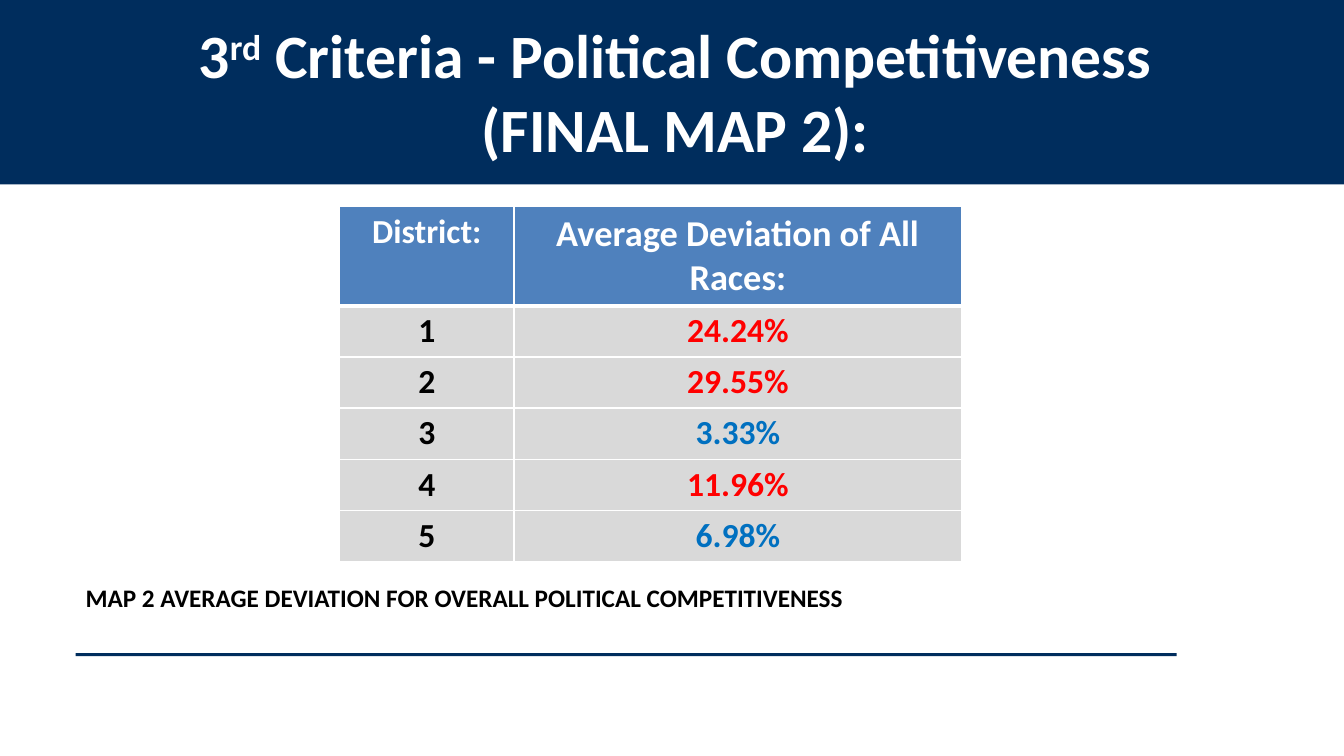
from lxml.etree import SubElement
from pptx import Presentation
from pptx.dml.color import RGBColor
from pptx.enum.shapes import MSO_SHAPE as Shape
from pptx.enum.text import MSO_ANCHOR as Anchor, MSO_AUTO_SIZE as AutoSize, PP_ALIGN as Align
from pptx.oxml.ns import qn
from pptx.util import Inches, Pt

NAVY = RGBColor(0x00, 0x2D, 0x5D)
HEADER_BLUE = RGBColor(0x4F, 0x81, 0xBD)
GREY = RGBColor(0xD9, 0xD9, 0xD9)
WHITE = RGBColor(0xFF, 0xFF, 0xFF)
BLACK = RGBColor(0x00, 0x00, 0x00)
RED = RGBColor(0xFF, 0x00, 0x00)
BLUE = RGBColor(0x00, 0x70, 0xC0)

WIDTH, HEIGHT = 13.33, 7.5
COMPETITIVE_LIMIT = 10
HEADINGS = [("District:", 24), ("Average Deviation of All Races:", 26)]
DEVIATIONS = [24.24, 29.55, 3.33, 11.96, 6.98]


def add_span(para, text, size, color):
    """Add one bold Calibri run and return it."""
    span = para.add_run()
    span.text = text
    span.font.name = "Calibri"
    span.font.size = Pt(size)
    span.font.bold = True
    span.font.color.rgb = color
    return span


def add_bar(page, left, top, width, height):
    """Add a plain navy rectangle."""
    bar = page.shapes.add_shape(Shape.RECTANGLE, *map(Inches, (left, top, width, height)))
    bar.shadow.inherit = False
    bar.fill.solid()
    bar.fill.fore_color.rgb = NAVY
    bar.line.fill.background()
    return bar


def add_title_band(page, left, top, width, height):
    """Fill the band and centre the two-line title over it."""
    title = page.shapes.title
    band = add_bar(page, left, top, width, height)
    title._element.addprevious(band._element)
    title.left, title.top = Inches(left + 1.06), Inches(top + 0.12)
    title.width, title.height = Inches(width - 2.05), Inches(height - 0.13)
    frame = title.text_frame
    frame.word_wrap = True
    frame.auto_size = AutoSize.NONE
    frame.vertical_anchor = Anchor.TOP
    first, second = frame.paragraphs[0], frame.add_paragraph()
    first.alignment = second.alignment = Align.CENTER
    add_span(first, "3", 44, WHITE)
    ordinal = add_span(first, "rd", 44, WHITE)
    ordinal.font._element.set("baseline", "30000")
    add_span(first, " Criteria - Political Competitiveness", 44, WHITE)
    add_span(second, "(FINAL MAP 2):", 44, WHITE)


def set_borders(cell, top, bottom):
    """Draw white cell borders, with the given top and bottom widths."""
    properties = cell._tc.get_or_add_tcPr()
    for side, points in (("L", 1), ("R", 1), ("T", top), ("B", bottom)):
        line = SubElement(properties, qn(f"a:ln{side}"), w=str(Pt(points)))
        fill = SubElement(line, qn("a:solidFill"))
        SubElement(fill, qn("a:srgbClr"), val=str(WHITE))


def fill_cell(cell, text, size, color, background, top=1, bottom=1):
    """Format one table cell and write its centred text."""
    set_borders(cell, top, bottom)
    cell.fill.solid()
    cell.fill.fore_color.rgb = background
    para = cell.text_frame.paragraphs[0]
    para.alignment = Align.CENTER
    add_span(para, text, size, color)


def add_deviation_table(page, left, top, width, height):
    """Add the table of average deviation by district."""
    row_height = 0.5
    table = page.shapes.add_table(
        len(DEVIATIONS) + 1, 2, *map(Inches, (left, top, width, height))
    ).table
    for column, share in zip(table.columns, (0.28, 0.72)):
        column.width = Inches(width * share)
    for row in table.rows:
        row.height = Inches(row_height)
    table.rows[0].height = Inches(height - row_height * len(DEVIATIONS))
    for index, (heading, size) in enumerate(HEADINGS):
        fill_cell(table.cell(0, index), heading, size, WHITE, HEADER_BLUE, bottom=3)
    for district, deviation in enumerate(DEVIATIONS, start=1):
        color = BLUE if deviation < COMPETITIVE_LIMIT else RED
        top_line = 3 if district == 1 else 1
        fill_cell(table.cell(district, 0), str(district), 24, BLACK, GREY, top=top_line)
        fill_cell(table.cell(district, 1), f"{deviation:.2f}%", 24, color, GREY, top=top_line)


def add_caption(page, left, top, width, height):
    """Add the caption below the table."""
    frame = page.shapes.add_textbox(*map(Inches, (left, top, width, height))).text_frame
    frame.word_wrap = True
    text = "MAP 2 AVERAGE DEVIATION FOR OVERALL POLITICAL COMPETITIVENESS"
    add_span(frame.paragraphs[0], text, 18, BLACK)


def main():
    """Build the slide and save the deck."""
    deck = Presentation()
    deck.slide_width, deck.slide_height = Inches(WIDTH), Inches(HEIGHT)
    page = deck.slides.add_slide(deck.slide_layouts[5])
    add_title_band(page, 0, 0, WIDTH, 1.83)
    add_bar(page, 0.75, 6.48, 10.92, 0.03)
    add_deviation_table(page, 3.37, 2.05, 6.17, 3.36)
    add_caption(page, 0.75, 5.73, 12.45, 0.4)
    deck.save("out.pptx")


if __name__ == "__main__":
    main()
